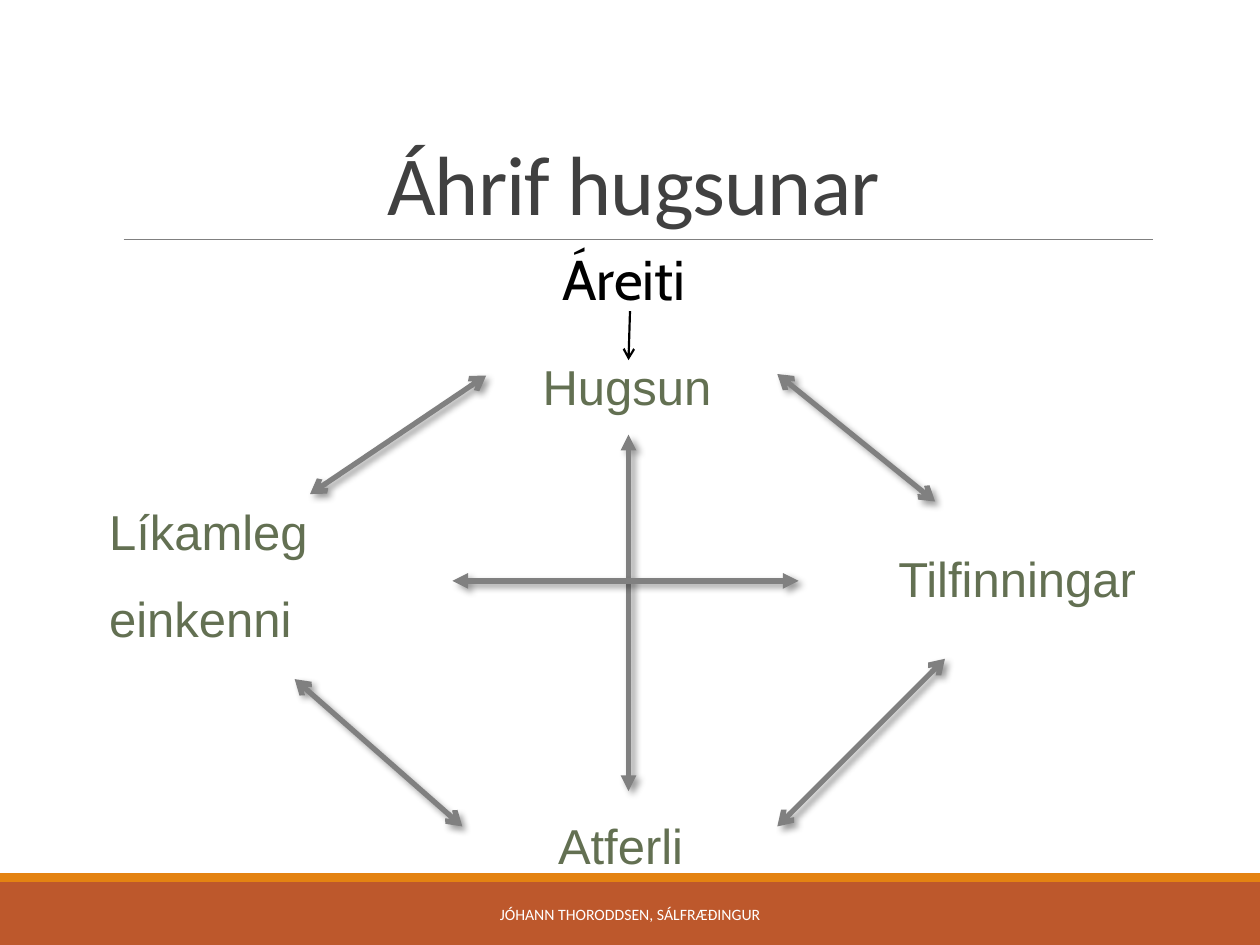
from collections import namedtuple

from lxml.etree import SubElement
from pptx import Presentation
from pptx.dml.color import RGBColor
from pptx.enum.shapes import MSO_CONNECTOR as Link, MSO_SHAPE as Shape
from pptx.enum.text import MSO_ANCHOR as Anchor, PP_ALIGN as Align
from pptx.oxml.ns import qn
from pptx.util import Cm, Pt

RUST = RGBColor(0xBD, 0x58, 0x2C)
ORANGE = RGBColor(0xE4, 0x83, 0x12)
GRAY = RGBColor(0x80, 0x80, 0x80)
CHARCOAL = RGBColor(0x40, 0x40, 0x40)
OLIVE = RGBColor(0x63, 0x70, 0x52)
BLACK = RGBColor(0, 0, 0)
WHITE = RGBColor(0xFF, 0xFF, 0xFF)

Box = namedtuple("Box", "left top width height")


def inside(box, left, top, width, height):
    return Box(box.left + left, box.top + top, width, height)


def add_text(page, box, text, font="Arial", size=28, color=OLIVE,
             align=Align.LEFT, anchor=Anchor.TOP, left_inset=0.25, inset=0.13,
             line_spacing=1.0, gap=0, tracking=None):
    """Write each line of text as a paragraph; gap is the points between them."""
    frame = page.shapes.add_textbox(*map(Cm, box)).text_frame
    frame.word_wrap = True
    frame.vertical_anchor = anchor
    frame.margin_left = Cm(left_inset)
    frame.margin_top = frame.margin_bottom = Cm(inset)
    for index, line in enumerate(text.split("\n")):
        para = frame.add_paragraph() if index else frame.paragraphs[0]
        para.alignment = align
        para.line_spacing = line_spacing
        para.space_before = Pt(gap if index else 0)
        span = para.add_run()
        span.text = line
        span.font.name = font
        span.font.size = Pt(size)
        span.font.color.rgb = color
        if tracking is not None:
            span.font._element.set("spc", str(int(tracking * 100)))


def add_shadow(effects):
    shadow = SubElement(effects, qn("a:outerShdw"), blurRad=str(Pt(4)),
                        dist=str(Pt(3)), dir=str(45 * 60000), rotWithShape="0")
    tint = SubElement(shadow, qn("a:srgbClr"), val="000000")
    SubElement(tint, qn("a:alpha"), val="40000")


def add_line(page, box, start, end, color=GRAY, width=3.0,
             head=None, tail=None, shadow=False):
    """Draw from start to end, both measured from the corner of box."""
    ends = [Cm(origin + offset) for point in (start, end)
            for origin, offset in zip(box, point)]
    line = page.shapes.add_connector(Link.STRAIGHT, *ends)
    line.line.color.rgb = color
    line.line.width = Pt(width)
    outline = line.line._get_or_add_ln()
    for tag, kind in (("a:headEnd", head), ("a:tailEnd", tail)):
        if kind:
            SubElement(outline, qn(tag), type=kind)
    effects = SubElement(line._element.spPr, qn("a:effectLst"))
    if shadow:
        add_shadow(effects)


def add_band(page, box, color):
    band = page.shapes.add_shape(Shape.RECTANGLE, *map(Cm, box))
    band.shadow.inherit = False
    band.fill.solid()
    band.fill.fore_color.rgb = color
    band.line.fill.background()


def add_header(page, box):
    add_line(page, box, (0.2, box.height), (box.width, box.height), width=0.5)
    add_text(page, box, "Áhrif hugsunar", font="Calibri", size=48,
             color=CHARCOAL, align=Align.CENTER, anchor=Anchor.BOTTOM,
             line_spacing=0.85, tracking=-0.5)


def add_footer(page, box):
    stripe = 0.18
    add_band(page, inside(box, 0, stripe, box.width, box.height - stripe), RUST)
    add_band(page, inside(box, 0, 0, box.width, stripe), ORANGE)
    width = 10.06
    add_text(page, inside(box, (box.width - width) / 2, 0.33, width, 1.02),
             "JÓHANN THORODDSEN, SÁLFRÆÐINGUR", font="Calibri", size=9,
             color=WHITE, align=Align.CENTER, anchor=Anchor.MIDDLE)


def add_thought_cycle(page, box):
    add_text(page, inside(box, 10.29, 2.26, 5.08, 1.45), "Hugsun")
    add_text(page, inside(box, 10.6, 11.51, 3.38, 1.45), "Atferli")
    add_text(page, inside(box, 17.46, 6.12, 5.92, 1.45), "Tilfinningar")
    add_text(page, inside(box, 0, 5.31, 9.32, 3), "Líkamleg\neinkenni",
             left_inset=1.8, inset=0, gap=16)

    cross = [((12.27, 3.96), (12.27, 11.15)), ((8.72, 6.91), (15.7, 6.91))]
    ring = [((9.4, 2.77), (5.85, 5.16)), ((5.54, 8.89), (8.92, 11.86)),
            ((15.27, 2.74), (18.45, 5.31)), ((18.65, 8.48), (15.27, 11.86))]
    for kind, arrows in (("triangle", cross), ("arrow", ring)):
        for start, end in arrows:
            add_line(page, box, start, end, head=kind, tail=kind, shadow=True)

    add_text(page, inside(box, 9.5, 0, 5.36, 1.63), "Áreiti", font="Cabin",
             size=32, color=BLACK, align=Align.CENTER)
    add_line(page, box, (12.3, 1.47), (12.27, 2.46), color=BLACK, width=1.25,
             tail="arrow")


def main():
    deck = Presentation()
    deck.slide_width, deck.slide_height = Cm(25.4), Cm(19.05)
    page = deck.slides.add_slide(deck.slide_layouts[6])
    add_footer(page, Box(0, 17.6, 25.4, 1.45))
    add_header(page, Box(2.29, 0.79, 20.96, 4.04))
    add_thought_cycle(page, Box(0.4, 4.8, 23.4, 13))
    deck.save("out.pptx")


if __name__ == "__main__":
    main()
